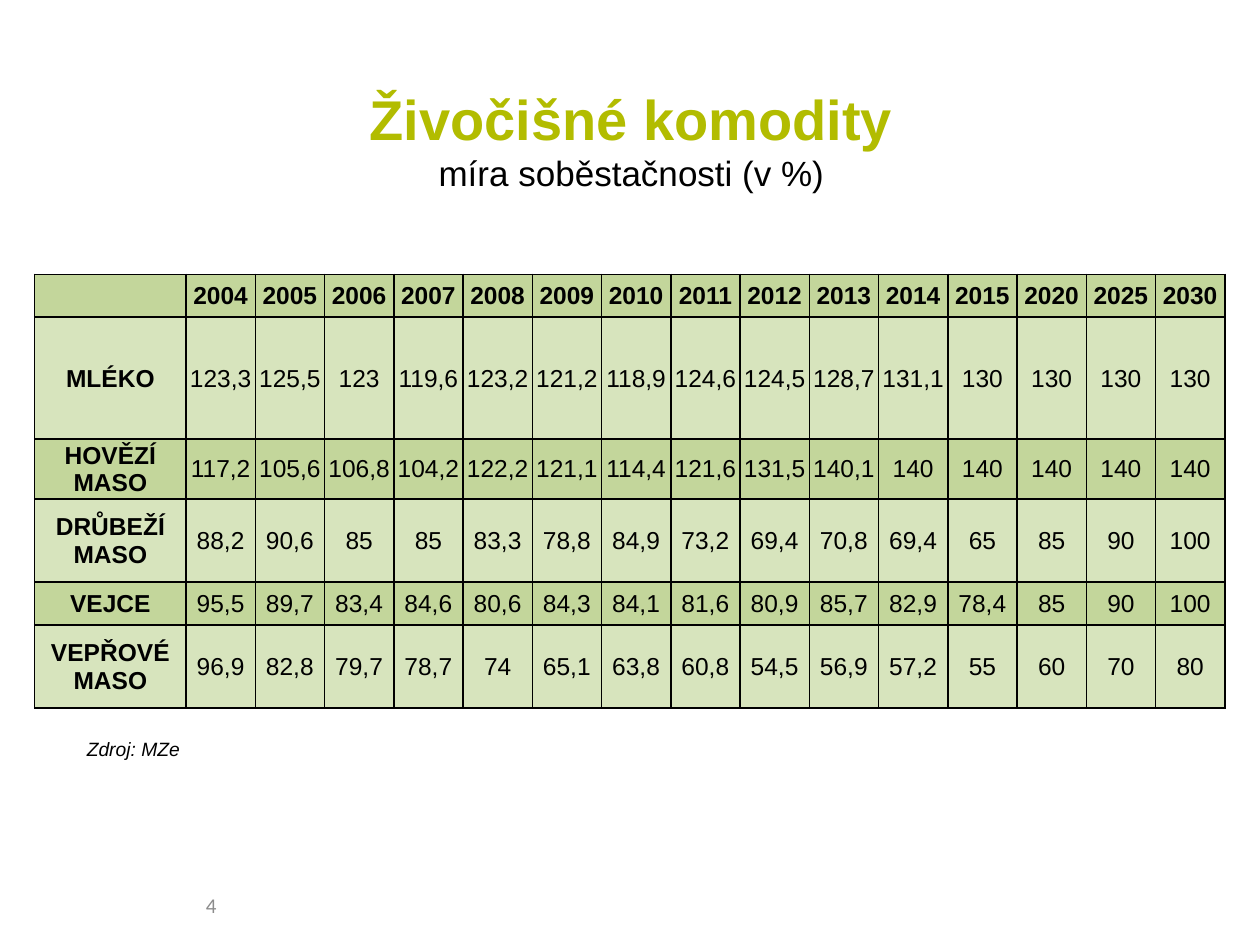
from lxml.etree import SubElement
from pptx import Presentation
from pptx.dml.color import RGBColor
from pptx.enum.text import MSO_ANCHOR as Anchor, MSO_AUTO_SIZE as AutoSize, PP_ALIGN as Align
from pptx.oxml.ns import qn
from pptx.util import Cm, Pt

LIME = RGBColor(0xB2, 0xBC, 0x00)
BLACK = RGBColor(0x00, 0x00, 0x00)
GRAY = RGBColor(0x8C, 0x8C, 0x8C)
DARK_BAND = RGBColor(0xC3, 0xD6, 0x9B)
LIGHT_BAND = RGBColor(0xD7, 0xE4, 0xBD)

LABEL_WIDTH = 3.05
ROW_HEIGHTS = [0.86, 2.46, 0.86, 1.68, 0.86, 1.68]
YEARS = "2004 2005 2006 2007 2008 2009 2010 2011 2012 2013 2014 2015 2020 2025 2030"
SELF_SUFFICIENCY = {
    "": YEARS,
    "MLÉKO": "123,3 125,5 123 119,6 123,2 121,2 118,9 124,6 124,5 128,7 131,1 130 130 130 130",
    "HOVĚZÍ MASO": "117,2 105,6 106,8 104,2 122,2 121,1 114,4 121,6 131,5 140,1 140 140 140 140 140",
    "DRŮBEŽÍ MASO": "88,2 90,6 85 85 83,3 78,8 84,9 73,2 69,4 70,8 69,4 65 85 90 100",
    "VEJCE": "95,5 89,7 83,4 84,6 80,6 84,3 84,1 81,6 80,9 85,7 82,9 78,4 85 90 100",
    "VEPŘOVÉ MASO": "96,9 82,8 79,7 78,7 74 65,1 63,8 60,8 54,5 56,9 57,2 55 60 70 80",
}


def add_run(paragraph, text, size, color=BLACK, bold=False, italic=False, face="Arial"):
    run = paragraph.add_run()
    run.text = text
    font = run.font
    font.name, font.size, font.bold, font.italic = face, Pt(size), bold, italic
    font.color.rgb = color


def add_paragraph_box(slide, box, align, anchor):
    frame = slide.shapes.add_textbox(*map(Cm, box)).text_frame
    frame.word_wrap = True
    frame.vertical_anchor = anchor
    paragraph = frame.paragraphs[0]
    paragraph.alignment = align
    return frame, paragraph


def add_heading(slide, box):
    _, heading = add_paragraph_box(slide, box, Align.CENTER, Anchor.MIDDLE)
    add_run(heading, "Živočišné komodity", 32, LIME, bold=True)
    heading.add_line_break()
    add_run(heading, "míra soběstačnosti (v %)", 20)


def set_borders(cell):
    properties = cell._tc.get_or_add_tcPr()
    for position, side in enumerate(("lnL", "lnR", "lnT", "lnB")):
        line = properties.makeelement(qn(f"a:{side}"), {"w": str(Pt(1))})
        fill = SubElement(line, qn("a:solidFill"))
        SubElement(fill, qn("a:srgbClr"), val=str(BLACK))
        properties.insert(position, line)


def fill_cell(cell, text, band, bold):
    cell.margin_left = cell.margin_right = cell.margin_top = Cm(0.02)
    cell.margin_bottom = 0
    cell.vertical_anchor = Anchor.MIDDLE
    cell.fill.solid()
    cell.fill.fore_color.rgb = band
    set_borders(cell)
    if text:
        paragraph = cell.text_frame.paragraphs[0]
        paragraph.alignment = Align.CENTER
        add_run(paragraph, text, 14, bold=bold)


def add_commodity_table(slide, box):
    left, top, width, height = box
    year_count = len(YEARS.split())
    table = slide.shapes.add_table(
        len(SELF_SUFFICIENCY), year_count + 1, Cm(left), Cm(top), Cm(width), Cm(height)
    ).table
    for column in table.columns:
        column.width = Cm((width - LABEL_WIDTH) / year_count)
    table.columns[0].width = Cm(LABEL_WIDTH)
    for row, row_height in zip(table.rows, ROW_HEIGHTS):
        row.height = Cm(row_height)
    for r, (commodity, values) in enumerate(SELF_SUFFICIENCY.items()):
        band = LIGHT_BAND if r % 2 else DARK_BAND
        for c, text in enumerate([commodity, *values.split()]):
            fill_cell(table.cell(r, c), text, band, bold=r == 0 or c == 0)


def add_source(slide, box):
    frame, source = add_paragraph_box(slide, box, Align.LEFT, Anchor.TOP)
    frame.auto_size = AutoSize.SHAPE_TO_FIT_TEXT
    add_run(source, "Zdroj: MZe", 11, italic=True)


def add_page_number(slide, box):
    _, number = add_paragraph_box(slide, box, Align.CENTER, Anchor.MIDDLE)
    add_run(number, "4", 12, GRAY, face="Calibri")


def main():
    deck = Presentation()
    deck.slide_width, deck.slide_height = Cm(25.4), Cm(19.05)
    slide = deck.slides.add_slide(deck.slide_layouts[6])
    add_heading(slide, (1.3, 1.52, 22.86, 2.57))
    add_commodity_table(slide, (0.7, 5.53, 24, sum(ROW_HEIGHTS)))
    add_source(slide, (1.5, 14.73, 3.81, 0.74))
    add_page_number(slide, (1.3, 17.73, 5.92, 1.02))
    deck.save("out.pptx")


if __name__ == "__main__":
    main()
